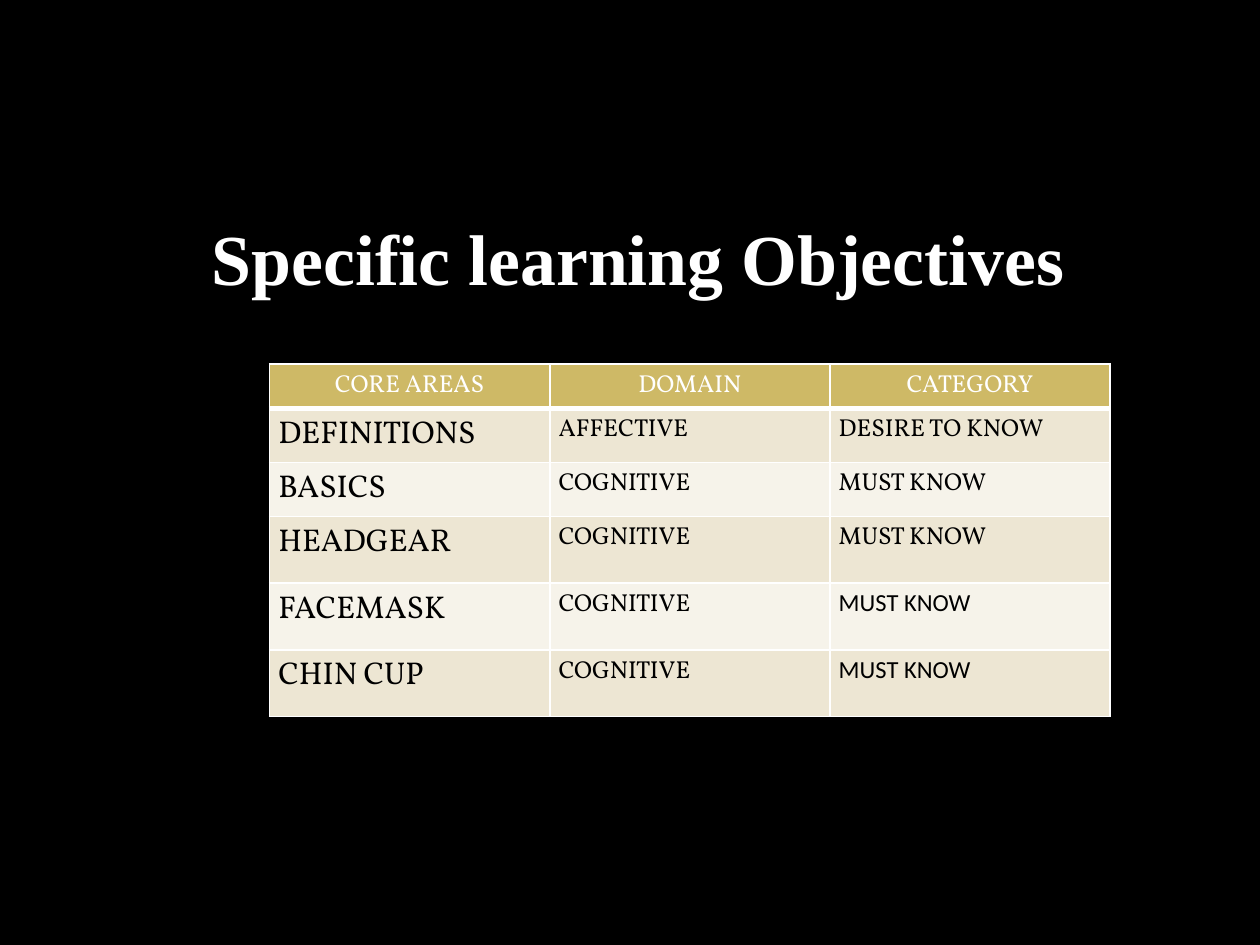
from lxml import etree
from pptx import Presentation
from pptx.dml.color import RGBColor
from pptx.enum.text import MSO_ANCHOR, PP_ALIGN
from pptx.oxml.ns import qn
from pptx.util import Inches, Pt

CENTER, LEFT = PP_ALIGN.CENTER, PP_ALIGN.LEFT
MIDDLE = MSO_ANCHOR.MIDDLE
BLACK = RGBColor(0x00, 0x00, 0x00)
WHITE = RGBColor(0xFF, 0xFF, 0xFF)
GOLD = RGBColor(0xCE, 0xB9, 0x66)
SAND = RGBColor(0xED, 0xE6, 0xD3)
IVORY = RGBColor(0xF6, 0xF3, 0xEA)

OBJECTIVES = [
    ("CORE AREAS", "DOMAIN", "CATEGORY"),
    ("DEFINITIONS", "AFFECTIVE", "DESIRE TO KNOW"),
    ("BASICS", "COGNITIVE", "MUST KNOW"),
    ("HEADGEAR", "COGNITIVE", "MUST KNOW"),
    ("FACEMASK", "COGNITIVE", "MUST KNOW"),
    ("CHIN CUP", "COGNITIVE", "MUST KNOW"),
]
ROW_HEIGHTS = [0.3] * 3 + [0.53] * 3
CALIBRI_CELLS = {(4, 2), (5, 2)}


def format_text(paragraph, font_name, size, color, align):
    """Set the font and alignment of one paragraph."""
    paragraph.alignment = align
    paragraph.font.name = font_name
    paragraph.font.size = Pt(size)
    paragraph.font.color.rgb = color


def add_borders(cell, bottom_width):
    """Draw white lines on all four sides of a cell."""
    properties = cell._tc.get_or_add_tcPr()
    for side, width in (("L", 1), ("R", 1), ("T", 1), ("B", bottom_width)):
        line = etree.SubElement(properties, qn(f"a:ln{side}"), w=str(Pt(width)))
        fill = etree.SubElement(line, qn("a:solidFill"))
        etree.SubElement(fill, qn("a:srgbClr"), val=str(WHITE))


def fill_cell(cell, text, row, column):
    """Write and style one cell according to its row and column."""
    is_header = row == 0
    cell.text = text
    cell.margin_left = cell.margin_right = Inches(0.07)
    cell.margin_top = cell.margin_bottom = Inches(0.04)
    add_borders(cell, 3 if is_header else 1)
    cell.fill.solid()
    cell.fill.fore_color.rgb = GOLD if is_header else SAND if row % 2 else IVORY
    format_text(
        cell.text_frame.paragraphs[0],
        "Calibri" if (row, column) in CALIBRI_CELLS else "Vollkorn",
        18 if column == 0 and not is_header else 14,
        WHITE if is_header else BLACK,
        CENTER if is_header else LEFT,
    )


def add_title(slide, text):
    """Place and format the title placeholder."""
    title = slide.shapes.title
    title.left, title.top = Inches(1.34), Inches(1.59)
    title.width, title.height = Inches(7.6), Inches(0.9)
    title.text_frame.text = text
    title.text_frame.vertical_anchor = MIDDLE
    heading = title.text_frame.paragraphs[0]
    format_text(heading, "Times New Roman", 41, WHITE, CENTER)
    heading.font.bold = True


def add_objectives_table(slide):
    """Add the table of core areas, domains and categories."""
    height = Inches(2.78)
    frame = slide.shapes.add_table(
        len(OBJECTIVES), len(OBJECTIVES[0]),
        Inches(2.14), Inches(2.89), Inches(6.67), height,
    )
    for row, (texts, row_height) in enumerate(zip(OBJECTIVES, ROW_HEIGHTS)):
        frame.table.rows[row].height = Inches(row_height)
        for column, text in enumerate(texts):
            fill_cell(frame.table.cell(row, column), text, row, column)
    frame.height = height


def main():
    """Build the learning objectives slide and save it."""
    presentation = Presentation()
    presentation.slide_width = Inches(10)
    presentation.slide_height = Inches(7.5)
    slide = presentation.slides.add_slide(presentation.slide_layouts[5])
    slide.background.fill.solid()
    slide.background.fill.fore_color.rgb = BLACK
    add_title(slide, "Specific learning Objectives ")
    add_objectives_table(slide)
    presentation.save("out.pptx")


if __name__ == "__main__":
    main()
